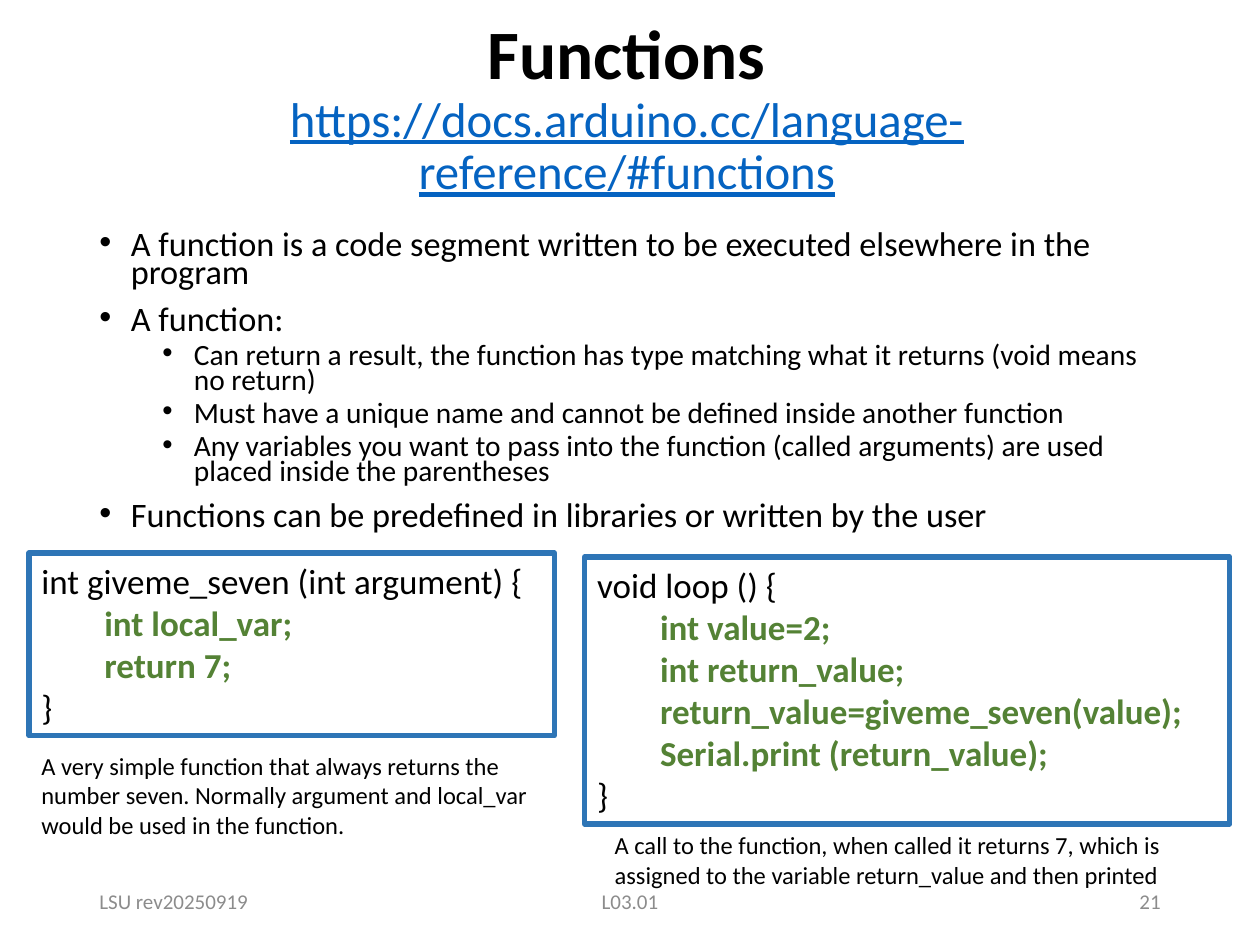
from dataclasses import dataclass

import pptx
import pptx.dml.color
import pptx.enum.shapes
import pptx.enum.text
import pptx.oxml.ns
import pptx.util
from lxml import etree

ALIGN = pptx.enum.text.PP_ALIGN
ANCHOR = pptx.enum.text.MSO_ANCHOR
SLIDE_WIDTH = pptx.util.Inches(10)
SLIDE_HEIGHT = pptx.util.Inches(7.5)


@dataclass(frozen=True)
class Theme:
    font: str = "Calibri"
    ink: str = "000000"
    link: str = "0563C1"
    code: str = "548235"
    frame: str = "2E75B6"
    muted: str = "8C8C8C"
    title_size: float = 39.6
    link_size: float = 27.9
    bullet_sizes: tuple = (19.6, 16.8)
    bullet_gaps: tuple = (10, 5)
    code_size: float = 20
    caption_size: float = 14
    footer_size: float = 12


THEME = Theme()


def area(left, top, width, height):
    """Turn percentages of the slide into a position and a size."""
    return (round(SLIDE_WIDTH * left / 100), round(SLIDE_HEIGHT * top / 100),
            round(SLIDE_WIDTH * width / 100), round(SLIDE_HEIGHT * height / 100))


def add_run(paragraph, words, size, color=THEME.ink, bold=False, underline=False):
    run = paragraph.add_run()
    run.text = words
    font = run.font
    font.name, font.size = THEME.font, pptx.util.Pt(size)
    font.bold, font.underline = bold, underline
    font.color.rgb = pptx.dml.color.RGBColor.from_string(color)


def paragraphs(frame, count):
    """Yield the first paragraph of the frame, then new ones."""
    yield frame.paragraphs[0]
    for _ in range(count - 1):
        yield frame.add_paragraph()


def add_child(parent, tag, **attributes):
    return etree.SubElement(parent, pptx.oxml.ns.qn(tag), **attributes)


def add_title(slide, heading, address):
    title = slide.shapes.title
    title.left, title.top, title.width, title.height = area(17.6, 2, 64.3, 19.33)
    frame = title.text_frame
    frame.auto_size = pptx.enum.text.MSO_AUTO_SIZE.NONE
    frame.vertical_anchor = ANCHOR.MIDDLE
    line = frame.paragraphs[0]
    line.alignment, line.line_spacing = ALIGN.CENTER, 0.9
    add_run(line, heading, THEME.title_size, bold=True)
    line.add_line_break()
    # The break takes the heading's size, so that the first line keeps its height
    add_child(line._p[-1], "a:rPr", sz=str(round(THEME.title_size * 100)))
    add_run(line, address, THEME.link_size, THEME.link, underline=True)


def add_text(slide, place, words, size, color=THEME.ink,
             alignment=ALIGN.LEFT, anchor=ANCHOR.TOP):
    frame = slide.shapes.add_textbox(*area(*place)).text_frame
    frame.word_wrap = True
    frame.vertical_anchor = anchor
    frame.paragraphs[0].alignment = alignment
    add_run(frame.paragraphs[0], words, size, color)


def add_bullets(slide, place, points):
    frame = slide.shapes.add_textbox(*area(*place)).text_frame
    frame.word_wrap = True
    for index, (point, (level, words)) in enumerate(
            zip(paragraphs(frame, len(points)), points)):
        point.level, point.line_spacing = level, 0.7
        if index:
            point.space_before = pptx.util.Pt(THEME.bullet_gaps[level])
        properties = point._p.get_or_add_pPr()
        properties.set("marL", str(pptx.util.Inches(0.25 + 0.5 * level)))
        properties.set("indent", str(pptx.util.Inches(-0.25)))
        add_child(properties, "a:buFont", typeface="Arial")
        add_child(properties, "a:buChar", char="•")
        add_run(point, words, THEME.bullet_sizes[level])


def add_code(slide, place, opening, body):
    """Draw a framed function: plain opening and brace, bold indented body."""
    box = slide.shapes.add_shape(pptx.enum.shapes.MSO_SHAPE.RECTANGLE, *area(*place))
    box.shadow.inherit = False
    box.fill.background()
    box.line.color.rgb = pptx.dml.color.RGBColor.from_string(THEME.frame)
    box.line.width = pptx.util.Pt(3)
    frame = box.text_frame
    frame.word_wrap = True
    frame.vertical_anchor = ANCHOR.TOP
    lines = [opening, *body, "}"]
    for line, words in zip(paragraphs(frame, len(lines)), lines):
        line.alignment = ALIGN.LEFT
        if words in body:
            tabs = add_child(line._p.get_or_add_pPr(), "a:tabLst")
            add_child(tabs, "a:tab", pos=str(pptx.util.Inches(0.5)), algn="l")
            add_run(line, "\t" + words, THEME.code_size, THEME.code, bold=True)
        else:
            add_run(line, words, THEME.code_size)


def main():
    deck = pptx.Presentation()
    deck.slide_width, deck.slide_height = SLIDE_WIDTH, SLIDE_HEIGHT
    slide = deck.slides.add_slide(deck.slide_layouts[5])

    add_title(slide, "Functions",
              "https://docs.arduino.cc/language-reference/#functions")
    add_bullets(slide, (6.9, 24, 86.2, 35.47), [
        (0, "A function is a code segment written to be executed elsewhere in the program"),
        (0, "A function:"),
        (1, "Can return a result, the function has type matching what it returns "
            "(void means no return)"),
        (1, "Must have a unique name and cannot be defined inside another function"),
        (1, "Any variables you want to pass into the function (called arguments) "
            "are used placed inside the parentheses"),
        (0, "Functions can be predefined in libraries or written by the user"),
    ])

    # Footer: revision, lesson and page
    for left, width, words, alignment in [
            (6.9, 22.5, "LSU rev20250919", ALIGN.LEFT),
            (33.1, 33.8, "L03.01", ALIGN.CENTER),
            (70.6, 22.5, "21", ALIGN.RIGHT)]:
        add_text(slide, (left, 92.67, width, 5.33), words, THEME.footer_size,
                 THEME.muted, alignment, ANCHOR.MIDDLE)

    # Function definition
    add_code(slide, (2.3, 58.53, 41.7, 19.33), "int giveme_seven (int argument) {",
             ["int local_var;", "return 7;"])
    add_text(slide, (2.3, 78.8, 41.7, 10.8),
             "A very simple function that always returns the number seven. Normally "
             "argument and local_var would be used in the function.",
             THEME.caption_size)

    # Function call
    add_code(slide, (46.4, 58.93, 51.2, 28.27), "void loop () {",
             ["int value=2;", "int return_value;",
              "return_value=giveme_seven(value);", "Serial.print (return_value);"])
    add_text(slide, (47.8, 87.2, 46.4, 7.6),
             "A call to the function, when called it returns 7, which is assigned to "
             "the variable return_value and then printed",
             THEME.caption_size)

    deck.save("out.pptx")


if __name__ == "__main__":
    main()
